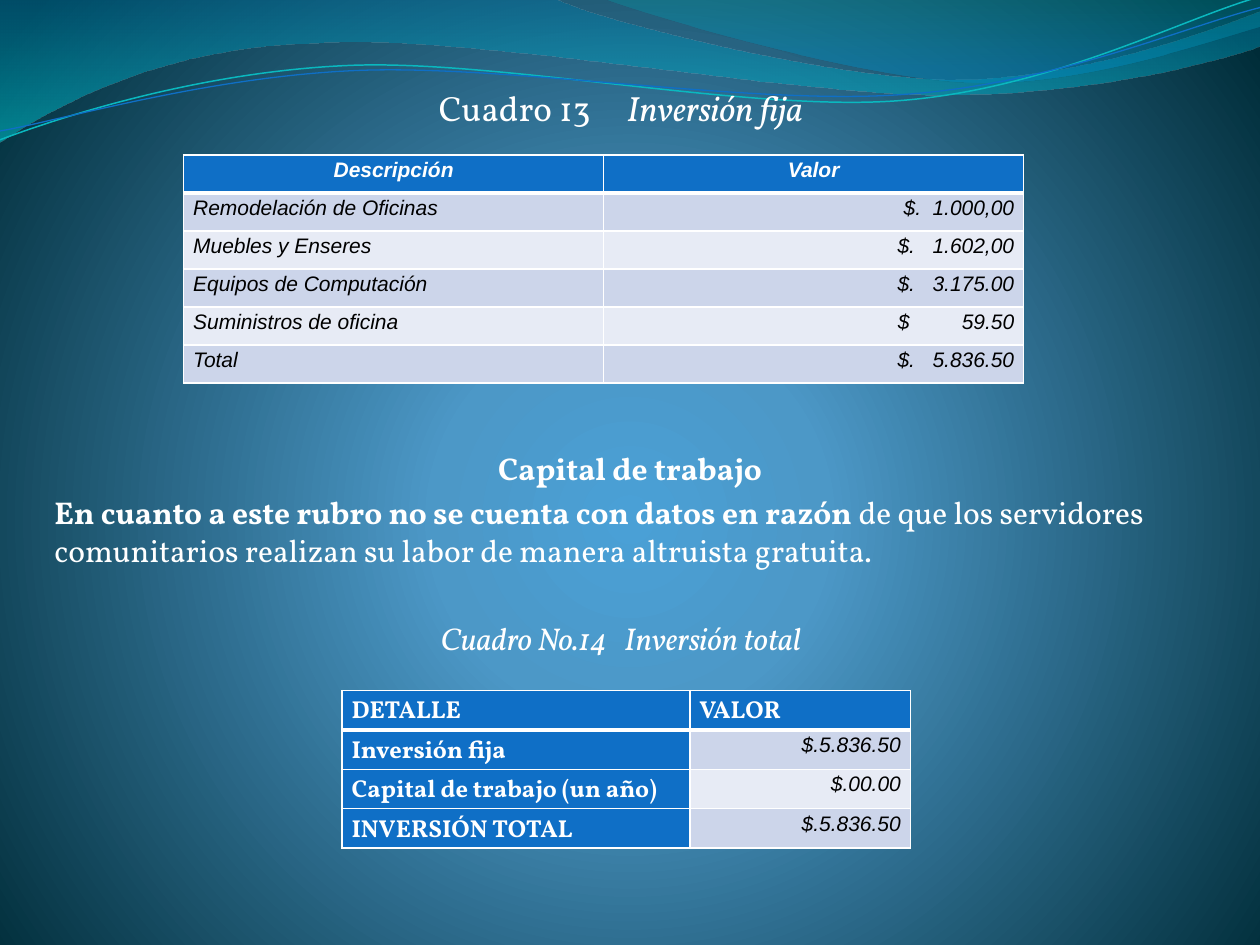
"""Build the slide with the fixed and total investment tables."""
from lxml import etree
from pptx import Presentation
from pptx.dml.color import RGBColor
from pptx.enum.text import PP_ALIGN
from pptx.oxml import parse_xml
from pptx.oxml.ns import nsdecls, qn
from pptx.util import Pt

LEFT, CENTER, RIGHT = PP_ALIGN.LEFT, PP_ALIGN.CENTER, PP_ALIGN.RIGHT
WHITE = RGBColor(0xFF, 0xFF, 0xFF)
BLACK = RGBColor(0x00, 0x00, 0x00)
BLUE = RGBColor(0x0F, 0x6F, 0xC6)
BANDS = (RGBColor(0xE7, 0xEB, 0xF5), RGBColor(0xCC, 0xD5, 0xEA))
GLOW = RGBColor(0x4A, 0xA0, 0xD6)
MID_BLUE = RGBColor(0x4C, 0x98, 0xC7)
DEEP_TEAL = RGBColor(0x00, 0x2C, 0x38)
WAVE_BLUE = RGBColor(0x00, 0x74, 0xA1)
WAVE_CYAN = RGBColor(0x00, 0xC6, 0xCF)
CREST_TEAL = RGBColor(0x00, 0xA1, 0xA9)
CREST_BLUE = RGBColor(0x00, 0x8B, 0xBF)
AQUA = RGBColor(0x0A, 0xB8, 0xBF)
TEXT_FONT, FIGURE_FONT = "Vollkorn", "Arial"
DOWNWARD = '<a:lin ang="5400000" scaled="1"/>'
RADIAL = ('<a:path path="circle"><a:fillToRect l="10000" t="110000" '
          'r="10000" b="100000"/></a:path>')


def apply_gradient(fill, owner, stops, direction):
    fill.gradient()
    plain = next(owner.iter(qn("a:gradFill")))
    stop_xml = "".join(
        f'<a:gs pos="{position * 1000}"><a:srgbClr val="{color}">'
        f'<a:alpha val="{opacity * 1000}"/></a:srgbClr></a:gs>'
        for position, color, opacity in stops)
    plain.getparent().replace(plain, parse_xml(
        f'<a:gradFill {nsdecls("a")} rotWithShape="1">'
        f'<a:gsLst>{stop_xml}</a:gsLst>{direction}</a:gradFill>'))


def add_tab(paragraph, position):
    tabs = etree.SubElement(paragraph._p.get_or_add_pPr(), qn("a:tabLst"))
    etree.SubElement(tabs, qn("a:tab"), pos=str(Pt(position)), algn="l")


prs = Presentation()
prs.slide_width, prs.slide_height = Pt(720), Pt(540)
slide = prs.slides.add_slide(prs.slide_layouts[6])
apply_gradient(slide.background.fill, slide.element,
               [(0, GLOW, 100), (25, MID_BLUE, 100), (100, DEEP_TEAL, 100)], RADIAL)

WAVES = [
    ([(0, 0), (4.4, -0.01),
      (4.76, 0.17, 6.64, 0.63, 7.58, 0.63), (8.53, 0.63, 9.58, 0.26, 10, 0.09),
      (10.01, 0.36),
      (9.83, 0.44, 8.7, 0.76, 7.46, 0.75), (6.22, 0.75, 3.82, 0.28, 2.57, 0.34),
      (1.29, 0.36, 0.46, 0.83, -0.01, 1.13)],
     [(0, WAVE_BLUE, 45), (100, WAVE_CYAN, 55)], None, 0),
    ([(4.79, -0.01),
      (5.09, 0.11, 6.82, 0.62, 7.69, 0.65), (8.56, 0.69, 9.61, 0.32, 10, 0.21),
      (10, 0)],
     [(0, CREST_TEAL, 30), (80, CREST_BLUE, 45)], None, 0),
    ([(0, 1.11),
      (0.48, 0.93, 1.58, 0.57, 2.77, 0.52), (3.95, 0.47, 5.93, 0.89, 7.13, 0.8),
      (8.33, 0.71, 9.38, 0.15, 9.98, -0.02)],
     None, AQUA, 0.85),
    ([(0, 1.04),
      (0.47, 0.96, 1.64, 0.61, 2.83, 0.56), (4.03, 0.51, 5.97, 0.84, 7.17, 0.75),
      (8.36, 0.67, 9.41, 0.21, 10, 0.06)],
     None, BLUE, 0.75),
]
for segments, stops, line_color, line_width in WAVES:
    anchors = [(Pt(segment[-2] * 72), Pt(segment[-1] * 72)) for segment in segments]
    builder = slide.shapes.build_freeform(*anchors[0])
    builder.add_line_segments(anchors[1:], close=stops is not None)
    wave = builder.convert_to_shape()
    for segment, straight in zip(segments[1:], list(wave.element.iter(qn("a:lnTo")))):
        if len(segment) == 6:
            curve = etree.Element(qn("a:cubicBezTo"))
            for x, y in zip(segment[::2], segment[1::2]):
                etree.SubElement(curve, qn("a:pt"), x=str(Pt(x * 72) - wave.left),
                                 y=str(Pt(y * 72) - wave.top))
            straight.getparent().replace(straight, curve)
    wave.shadow.inherit = False
    if stops:
        apply_gradient(wave.fill, wave.element, stops, DOWNWARD)
        wave.line.fill.background()
    else:
        wave.fill.background()
        wave.line.color.rgb = line_color
        wave.line.width = Pt(line_width)

PARAGRAPHS = [
    ([("Cuadro 13\t", False, False), ("Inversión fija", False, True)],
     CENTER, 20, 0, 0, 107.5),
    ([("Capital de trabajo", True, False)], CENTER, 18, 183, 10.5, None),
    ([("En cuanto a este rubro no se cuenta con datos en razón ", True, False),
      ("de que los servidores comunitarios realizan su labor de manera "
       "altruista gratuita.", False, False)], LEFT, 18, 3.4, 0, None),
    ([("Cuadro No.14\tInversión total", False, True)], CENTER, 18, 28.5, 0, 105),
]
body = slide.shapes.add_textbox(Pt(31), Pt(21), Pt(649), Pt(519)).text_frame
body.word_wrap = True
body.margin_left, body.margin_right = 0, Pt(1.44)
body.margin_top, body.margin_bottom = Pt(30.8), Pt(3.6)
for index, (runs, alignment, size, gap, indent, tab) in enumerate(PARAGRAPHS):
    paragraph = body.add_paragraph() if index else body.paragraphs[0]
    if tab:
        add_tab(paragraph, tab)
    if indent:
        paragraph._p.get_or_add_pPr().set("marL", str(Pt(indent)))
    paragraph.alignment = alignment
    paragraph.line_spacing = Pt(21.75)
    paragraph.space_before = Pt(gap)
    paragraph.font.name = TEXT_FONT
    paragraph.font.size = Pt(size)
    paragraph.font.color.rgb = WHITE
    for text, bold, italic in runs:
        run = paragraph.add_run()
        run.text = text
        run.font.bold, run.font.italic = bold, italic

TOTAL_INVESTMENT = [
    ("DETALLE", "VALOR"),
    ("Inversión fija", "$.5.836.50"),
    ("Capital de trabajo (un año)", "$.00.00"),
    ("INVERSIÓN TOTAL", "$.5.836.50"),
]
FIXED_INVESTMENT = [
    ("Descripción", "Valor"),
    ("Remodelación de Oficinas", "$.\t1.000,00"),
    ("Muebles y Enseres", "$.\t1.602,00"),
    ("Equipos de Computación", "$.\t3.175.00"),
    ("Suministros de oficina", "$\t59.50"),
    ("Total", "$.\t5.836.50"),
]
FIXED_TABS = {1: 16.5, 2: 20, 3: 20, 4: 36.5, 5: 20}
TABLES = [
    (TOTAL_INVESTMENT, 195.5, 394.6, (198.72, 126), 22.5, True, LEFT, TEXT_FONT, 14, {}),
    (FIXED_INVESTMENT, 105, 88.5, (240, 240), 21.75, False, CENTER, FIGURE_FONT, 12,
     FIXED_TABS),
]
for (rows, left, top, widths, row_height, blue_labels, header_alignment,
     header_font, header_size, tabs) in TABLES:
    table = slide.shapes.add_table(len(rows), 2, Pt(left), Pt(top), Pt(sum(widths)),
                                   Pt(row_height * len(rows))).table
    for column, width in zip(table.columns, widths):
        column.width = Pt(width)
    for r, texts in enumerate(rows):
        table.rows[r].height = Pt(row_height)
        for c, text in enumerate(texts):
            cell = table.cell(r, c)
            cell.margin_left = cell.margin_right = Pt(5.4)
            cell.margin_top = cell.margin_bottom = 0
            for side in "LRTB":
                thick = (r, side) in ((0, "B"), (1, "T"))
                cell._tc.get_or_add_tcPr().append(parse_xml(
                    f'<a:ln{side} {nsdecls("a")} w="{Pt(3 if thick else 1)}"><a:solidFill>'
                    f'<a:srgbClr val="{WHITE}"/></a:solidFill></a:ln{side}>'))
            heading = r == 0 or (blue_labels and c == 0)
            cell.fill.solid()
            cell.fill.fore_color.rgb = BLUE if heading else BANDS[r % 2]
            paragraph = cell.text_frame.paragraphs[0]
            paragraph.text = text
            if c == 1 and r in tabs:
                add_tab(paragraph, tabs[r])
            paragraph.line_spacing = 1.15
            paragraph.alignment = header_alignment if r == 0 else (LEFT, RIGHT)[c]
            font = paragraph.font
            font.name = header_font if heading else FIGURE_FONT
            font.size = Pt(header_size if heading else 12)
            font.bold = heading
            font.italic = not (heading and blue_labels)
            font.color.rgb = WHITE if heading else BLACK

prs.save("out.pptx")
